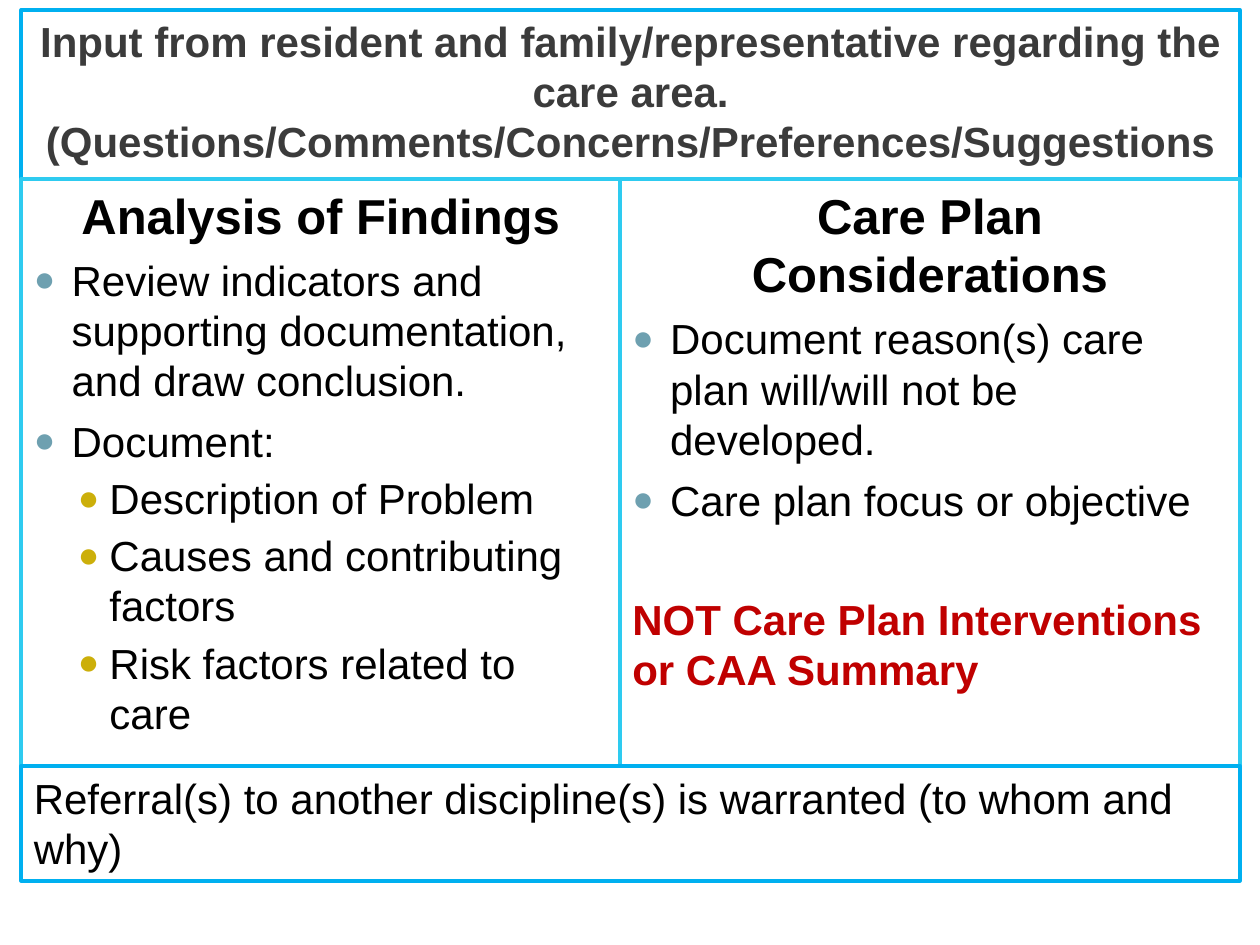
from lxml import etree
from pptx import Presentation
from pptx.dml.color import RGBColor
from pptx.enum import shapes, text
from pptx.oxml.ns import qn
from pptx.util import Inches, Pt

THEME = {
    "font": "Arial", "head": 28, "body": 24, "line": 2.25,
    "ink": "000000", "title": "3B3B3B", "alert": "C00000",
    "outer": "00B0F0", "inner": "2ECBF0",
}

STYLES = {
    "title": {"color": "title", "bold": True, "center": True},
    "head": {"size": "head", "bold": True, "center": True},
    "item": {"gap": 5.8, "bullet": ("6EA0B0", 0.3, 0.3)},
    "sub": {"gap": 3.8, "bullet": ("CCAF0A", 0.6, 0.25), "level": 1},
    "alert": {"gap": 39.2, "color": "alert", "bold": True},
    "plain": {},
}

TITLE = [("title", "Input from resident and family/representative regarding the care area.\n"
                   "(Questions/Comments/Concerns/Preferences/Suggestions")]
FINDINGS = [
    ("head", "Analysis of Findings"),
    ("item", "Review indicators and supporting documentation, and draw conclusion."),
    ("item", "Document:"),
    ("sub", "Description of Problem"),
    ("sub", "Causes and contributing factors"),
    ("sub", "Risk factors related to care"),
]
PLAN = [
    ("head", "Care Plan Considerations"),
    ("item", "Document reason(s) care plan will/will not be developed."),
    ("item", "Care plan focus or objective"),
    ("alert", "NOT Care Plan Interventions or CAA Summary"),
]
REFERRAL = [("plain", "Referral(s) to another discipline(s) is warranted (to whom and why)")]

LEFT, MID, RIGHT = 0.17, 4.92, 9.84
ROWS = [0.08, 1.42, 6.08, 6.99]


def tint(name):
    return RGBColor.from_string(THEME[name])


def add_bullet(para, color, left, hang):
    props = para._p.get_or_add_pPr()
    props.set("marL", str(Inches(left)))
    props.set("indent", str(-Inches(hang)))
    fill = etree.SubElement(props, qn("a:buClr"))
    etree.SubElement(fill, qn("a:srgbClr"), val=color)
    etree.SubElement(props, qn("a:buSzPct"), val="85000")
    etree.SubElement(props, qn("a:buFont"), typeface=THEME["font"])
    etree.SubElement(props, qn("a:buChar"), char="●")


def add_para(para, kind, words):
    style = STYLES[kind]
    para.text = words
    para.level = style.get("level", 0)
    para.alignment = text.PP_ALIGN.CENTER if style.get("center") else text.PP_ALIGN.LEFT
    para.space_before = Pt(style.get("gap", 0))
    if "bullet" in style:
        add_bullet(para, *style["bullet"])
    for run in para.runs:
        run.font.name = THEME["font"]
        run.font.size = Pt(THEME[style.get("size", "body")])
        run.font.bold = style.get("bold", False)
        run.font.color.rgb = tint(style.get("color", "ink"))


def add_panel(slide, left, right, row, line, paras, anchor=text.MSO_ANCHOR.TOP, base=0.05):
    top, bottom = ROWS[row:row + 2]
    panel = slide.shapes.add_shape(
        shapes.MSO_SHAPE.RECTANGLE, Inches(left), Inches(top),
        Inches(right - left), Inches(bottom - top))
    panel.shadow.inherit = False
    panel.fill.background()
    panel.line.color.rgb = tint(line)
    panel.line.width = Pt(THEME["line"])
    frame = panel.text_frame
    frame.word_wrap = True
    frame.vertical_anchor = anchor
    frame.margin_bottom = Inches(base)
    for i, (kind, words) in enumerate(paras):
        para = frame.add_paragraph() if i else frame.paragraphs[0]
        add_para(para, kind, words)


def main():
    deck = Presentation()
    deck.slide_width, deck.slide_height = Inches(10), Inches(7.5)
    slide = deck.slides.add_slide(deck.slide_layouts[6])
    add_panel(slide, LEFT, RIGHT, 0, "outer", TITLE, text.MSO_ANCHOR.BOTTOM, 0.1)
    add_panel(slide, LEFT, MID, 1, "inner", FINDINGS)
    add_panel(slide, MID, RIGHT, 1, "inner", PLAN)
    add_panel(slide, LEFT, RIGHT, 2, "outer", REFERRAL)
    deck.save("out.pptx")


if __name__ == "__main__":
    main()
